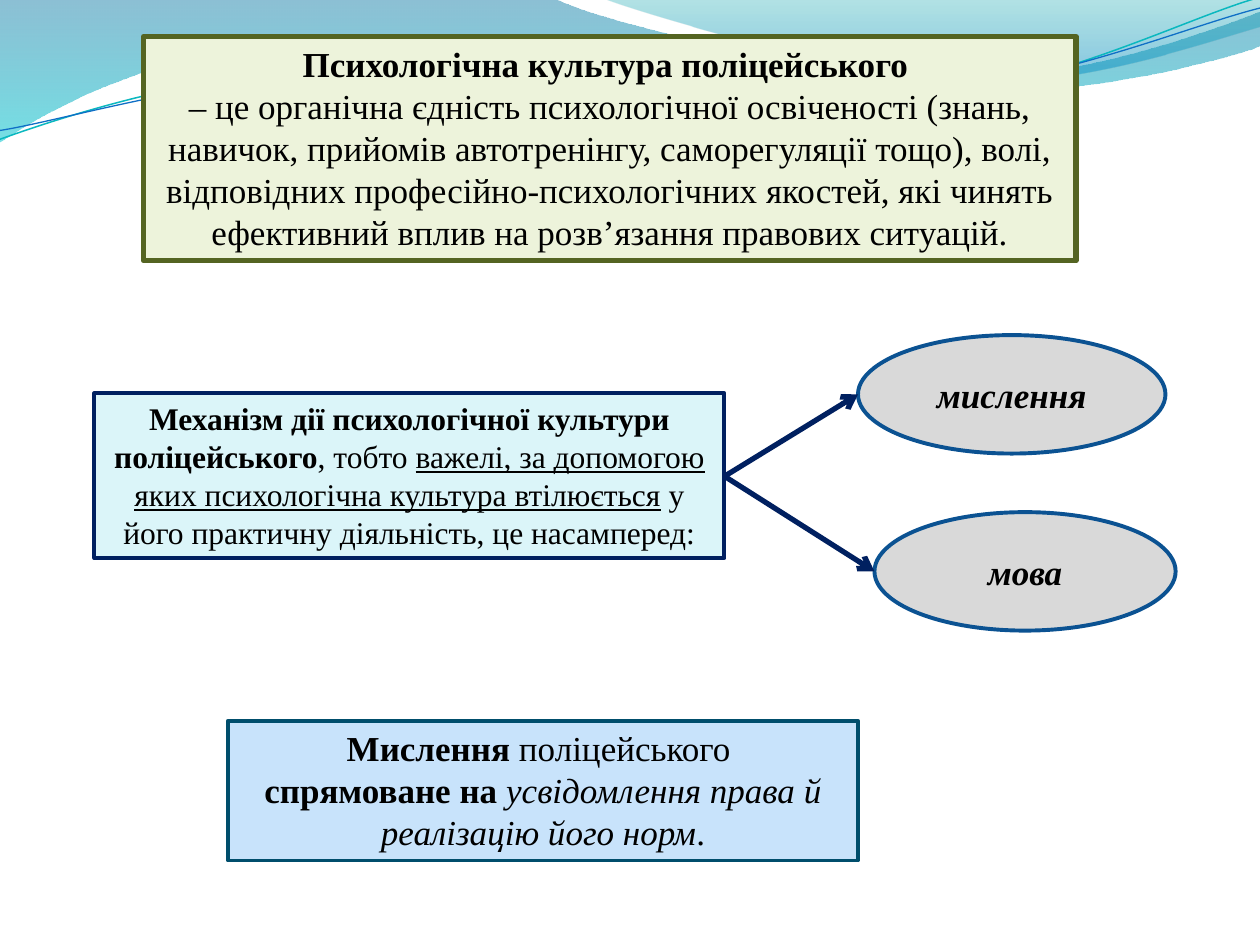
from lxml.etree import SubElement
from pptx import Presentation
from pptx.dml.color import RGBColor
from pptx.enum.shapes import MSO_CONNECTOR, MSO_SHAPE
from pptx.enum.text import MSO_ANCHOR, MSO_AUTO_SIZE, PP_ALIGN
from pptx.oxml.ns import qn
from pptx.util import Inches, Pt

prs = Presentation()
prs.slide_width, prs.slide_height = Inches(10), Inches(7.5)
slide = prs.slides.add_slide(prs.slide_layouts[6])
shapes = slide.shapes

# Square grid: 100 columns by 75 rows
CELL = prs.slide_width // 100
color = RGBColor.from_string


def curve(nodes):
    """Outline through nodes: (x, y) is a line, six numbers are a Bezier curve."""
    nodes = [[round(n * CELL) for n in node] for node in nodes]
    builder = shapes.build_freeform(*nodes[0])
    builder.add_line_segments([node[-2:] for node in nodes[1:]], close=nodes[0] == nodes[-1])
    outline = builder.convert_to_shape()
    outline.shadow.inherit = False
    # Turn the straight segments that have control points into Bezier curves
    segments = list(outline.element.iter(qn("a:lnTo")))
    for segment, node in zip(segments, nodes[1:]):
        if len(node) == 6:
            bezier = SubElement(segment.getparent(), qn("a:cubicBezTo"))
            for x, y in zip(node[::2], node[1::2]):
                SubElement(bezier, qn("a:pt"), x=str(x - outline.left), y=str(y - outline.top))
            segment.getparent().replace(segment, bezier)
    return outline


def panel(kind, place, fill, border, border_width, size, paragraphs):
    """Filled shape with centred text; each run is (text, style letters b, i, u)."""
    shape = shapes.add_shape(kind, *(round(n * CELL) for n in place))
    shape.shadow.inherit = False
    shape.fill.solid()
    shape.fill.fore_color.rgb = color(fill)
    shape.line.color.rgb = color(border)
    shape.line.width = Pt(border_width)
    frame = shape.text_frame
    frame.word_wrap = True
    if kind == MSO_SHAPE.OVAL:
        frame.vertical_anchor = MSO_ANCHOR.MIDDLE
    else:
        frame.vertical_anchor = MSO_ANCHOR.TOP
        frame.auto_size = MSO_AUTO_SIZE.SHAPE_TO_FIT_TEXT
    for index, runs in enumerate(paragraphs):
        paragraph = frame.add_paragraph() if index else frame.paragraphs[0]
        paragraph.alignment = PP_ALIGN.CENTER
        for text, style in runs:
            run = paragraph.add_run()
            run.text = text
            run.font.name = "Times New Roman"
            run.font.size = Pt(size)
            run.font.color.rgb = color("000000")
            run.font.bold = "b" in style
            run.font.italic = "i" in style
            run.font.underline = "u" in style


# Translucent waves along the top: outline and gradient stops (position, colour, opacity)
waves = [
    ([(-0.1, -0.1), (44, -0.1), (47.6, 1.7, 66.4, 6.3, 75.8, 6.3),
      (85.3, 6.3, 95.8, 2.6, 100, 0.9), (100.1, 3.6),
      (98.3, 4.4, 87, 7.6, 74.6, 7.5), (62.2, 7.5, 38.2, 2.8, 25.7, 3.4),
      (12.9, 3.6, 4.6, 8.3, -0.1, 11.3), (-0.1, -0.1)],
     [(0, "0074A1", 45), (1, "00C6CF", 55)]),
    ([(47.9, -0.1), (50.9, 1.1, 68.2, 6.2, 76.9, 6.5),
      (85.6, 6.9, 96.1, 3.2, 100, 2.1), (100, -0.1), (47.9, -0.1)],
     [(0, "00A1A9", 30), (0.8, "008BBF", 45)]),
]
for nodes, stops in waves:
    wave = curve(nodes)
    wave.line.fill.background()
    wave.fill.gradient()
    wave.fill.gradient_angle = 270
    for stop, (position, tint, _) in zip(wave.fill.gradient_stops, stops):
        stop.position = position
        stop.color.rgb = color(tint)
    for tint_xml, (_, _, opacity) in zip(wave.element.spPr.iter(qn("a:srgbClr")), stops):
        SubElement(tint_xml, qn("a:alpha"), val=str(opacity * 1000))

# Thin strands over the waves, tilted slightly upwards
strands = [
    ([(-0.2, 8.7), (4.7, 7.2, 15.8, 4.1, 27.7, 4.2), (39.6, 4.2, 59.1, 9.3, 71.2, 9),
      (83.2, 8.7, 94, 3.6, 100, 2.2)], "0AB8BF", 0.85),
    ([(-0.2, 8), (4.6, 7.5, 16.4, 4.5, 28.3, 4.6), (40.4, 4.6, 59.6, 8.9, 71.6, 8.5),
      (83.5, 8.3, 94.2, 4.2, 100.2, 3)], "0F6FC6", 0.75),
]
for nodes, tint, width in strands:
    strand = curve(nodes)
    strand.rotation = 357.3
    strand.fill.background()
    strand.line.color.rgb = color(tint)
    strand.line.width = Pt(width)

# Definition
panel(MSO_SHAPE.RECTANGLE, (11.4, 2.9, 74, 17.8), "EDF3DB", "546422", 3, 20, [
    [("Психологічна культура поліцейського ", "b")],
    [("– це органічна єдність психологічної освіченості (знань, навичок, прийомів "
      "автотренінгу, саморегуляції тощо), волі, відповідних професійно-психологічних "
      "якостей, які чинять ефективний вплив на розв’язання правових ситуацій.", "")],
])

# Mechanism and its two levers
panel(MSO_SHAPE.RECTANGLE, (7.5, 31.2, 50, 13.1), "DBF5F9", "002060", 2.25, 18, [
    [("Механізм дії психологічної культури поліцейського", "b"),
     (", тобто ", ""),
     ("важелі, за допомогою яких психологічна культура втілюється", "u"),
     (" у його практичну діяльність, це насамперед:", "")],
])
levers = [("мислення", (68.1, 26.6, 24.4, 9.4)), ("мова", (69.4, 40.65, 23.9, 9.4))]
for lever, place in levers:
    panel(MSO_SHAPE.OVAL, place, "D9D9D9", "0B5292", 2.25, 20, [[(lever, "bi")]])

# Arrows from the mechanism to each lever
for _, (left, top, _, height) in levers:
    ends = (57.5, 37.8, left, top + height / 2)
    arrow = shapes.add_connector(MSO_CONNECTOR.STRAIGHT, *(round(n * CELL) for n in ends))
    arrow.line.color.rgb = color("002060")
    arrow.line.width = Pt(3)
    SubElement(arrow.element.spPr.find(qn("a:ln")), qn("a:tailEnd"), type="arrow")
    SubElement(arrow.element.spPr, qn("a:effectLst"))

# Purpose of thinking
panel(MSO_SHAPE.RECTANGLE, (18.1, 57.2, 50, 11.1), "C8E3FB", "004E6C", 2.25, 20, [
    [("Мислення ", "b"), ("поліцейського ", "")],
    [("спрямоване на ", "b"), ("усвідомлення права й реалізацію його норм", "i"), (".", "")],
])

prs.save("out.pptx")
